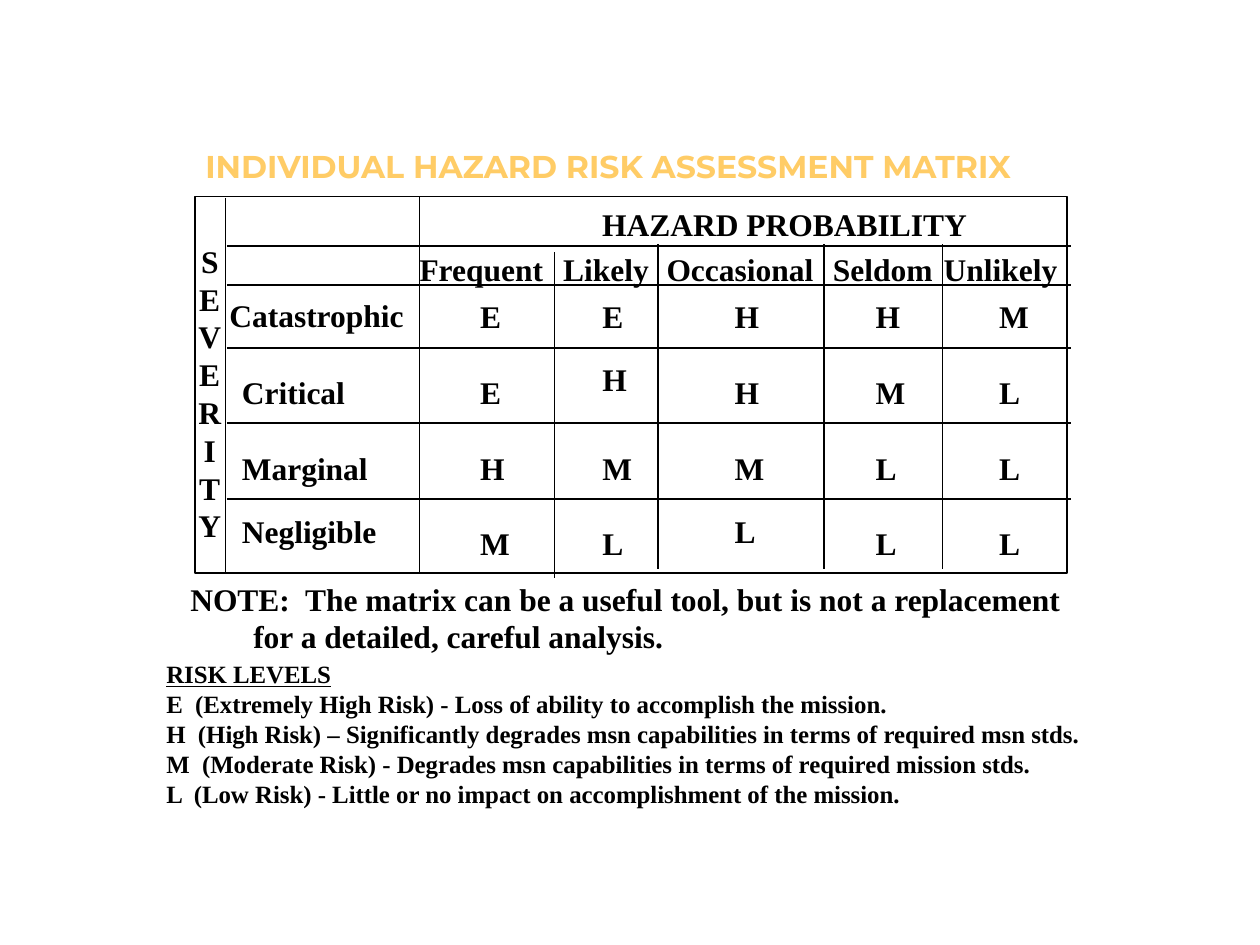
from pptx import Presentation
from pptx.dml.color import RGBColor
from pptx.enum.shapes import MSO_CONNECTOR, MSO_SHAPE
from pptx.enum.text import MSO_AUTO_SIZE, PP_ALIGN
from pptx.oxml.ns import qn
from pptx.util import Inches, Pt
from lxml import etree

STRAIGHT = MSO_CONNECTOR.STRAIGHT
RECTANGLE = MSO_SHAPE.RECTANGLE
GROW = MSO_AUTO_SIZE.SHAPE_TO_FIT_TEXT
LEFT, CENTER = PP_ALIGN.LEFT, PP_ALIGN.CENTER
SERIF = "Times New Roman"
color = RGBColor.from_string

presentation = Presentation()
presentation.slide_width = Inches(10)
presentation.slide_height = Inches(7.5)
slide = presentation.slides.add_slide(presentation.slide_layouts[6])


def add_text(lines, left, top, width, height=0.38, size=18, font=SERIF,
             fill="000000", align=LEFT):
    box = slide.shapes.add_textbox(Inches(left), Inches(top), Inches(width), Inches(height))
    frame = box.text_frame
    frame.word_wrap = False
    frame.auto_size = GROW
    frame.margin_left = frame.margin_right = Inches(0.07)
    frame.margin_top = frame.margin_bottom = Inches(0.04)
    frame.text = "\n".join(lines)
    for paragraph in frame.paragraphs:
        paragraph.alignment = align
        paragraph.font.name = font
        paragraph.font.size = Pt(size)
        paragraph.font.bold = True
        paragraph.font.color.rgb = color(fill)
    return frame


def add_line(x1, y1, x2, y2):
    line = slide.shapes.add_connector(STRAIGHT, Inches(x1), Inches(y1), Inches(x2), Inches(y2))
    line.line.color.rgb = color("000000")
    line.line.width = Pt(1)
    etree.SubElement(line._element.spPr, qn("a:effectLst"))


# Title
add_text(["INDIVIDUAL HAZARD RISK ASSESSMENT MATRIX"], 1.56, 1.13, 7.02,
         font="Montserrat", fill="FFCC66")

# Matrix frame and rules
frame_box = slide.shapes.add_shape(RECTANGLE, Inches(1.55), Inches(1.56), Inches(6.92), Inches(2.99))
frame_box.shadow.inherit = False
frame_box.fill.background()
frame_box.line.color.rgb = color("000000")
frame_box.line.width = Pt(1)

for y in (1.95, 2.26, 2.76, 3.36, 3.96):
    add_line(1.8, y, 8.5, y)
for x, top, bottom in ((1.79, 1.57, 4.55), (3.33, 1.56, 4.55), (4.4, 2, 4.59),
                       (5.22, 1.94, 4.52), (6.54, 1.94, 4.52), (7.48, 1.94, 4.52)):
    add_line(x, top, x, bottom)

# Severity axis and row labels
add_text("SEVERITY", 1.5, 1.88, 0.33, 2.5, align=CENTER)
for label, left, top, width in (("Catastrophic", 1.75, 2.31, 1.55), ("Critical", 1.85, 2.92, 0.98),
                                ("Marginal", 1.85, 3.52, 1.16), ("Negligible", 1.85, 4.02, 1.23)):
    add_text([label], left, top, width)

# Probability headings, each with the ratings below it
add_text(["HAZARD PROBABILITY"], 4.71, 1.59, 3.07)
letter_widths = {"E": 0.32, "H": 0.35, "M": 0.39, "L": 0.32}
raised = {("Likely", 1), ("Occasional", 3)}  # ratings set a little higher than their row
columns = (
    ("Frequent", 3.26, 1.14, 3.74, "EEHM"),
    ("Likely", 4.4, 0.84, 4.71, "EHML"),
    ("Occasional", 5.22, 1.33, 5.76, "HHML"),
    ("Seldom", 6.54, 0.95, 6.88, "HMLL"),
    ("Unlikely", 7.42, 1.06, 7.86, "MLLL"),
)
for heading, left, width, rating_left, ratings in columns:
    add_text([heading], left, 1.94, width)
    for row, rating in enumerate(ratings):
        top = 2.32 + 0.6 * row - (0.1 if (heading, row) in raised else 0)
        add_text([rating], rating_left, top, letter_widths[rating])

# Note
add_text(["NOTE:  The matrix can be a useful tool, but is not a replacement",
          "\tfor a detailed, careful analysis."], 1.44, 4.56, 7.19, 0.68)

# Risk levels
legend = add_text([
    "RISK LEVELS",
    "E  (Extremely High Risk) - Loss of ability to accomplish the mission.",
    "H  (High Risk) – Significantly degrades msn capabilities in terms of required msn stds.",
    "M  (Moderate Risk) - Degrades msn capabilities in terms of required mission stds.",
    "L  (Low Risk) - Little or no impact on accomplishment of the mission.",
], 1.25, 5.19, 7.57, 1.27, size=14.2)
legend.paragraphs[0].runs[0].font.underline = True

presentation.save("out.pptx")
